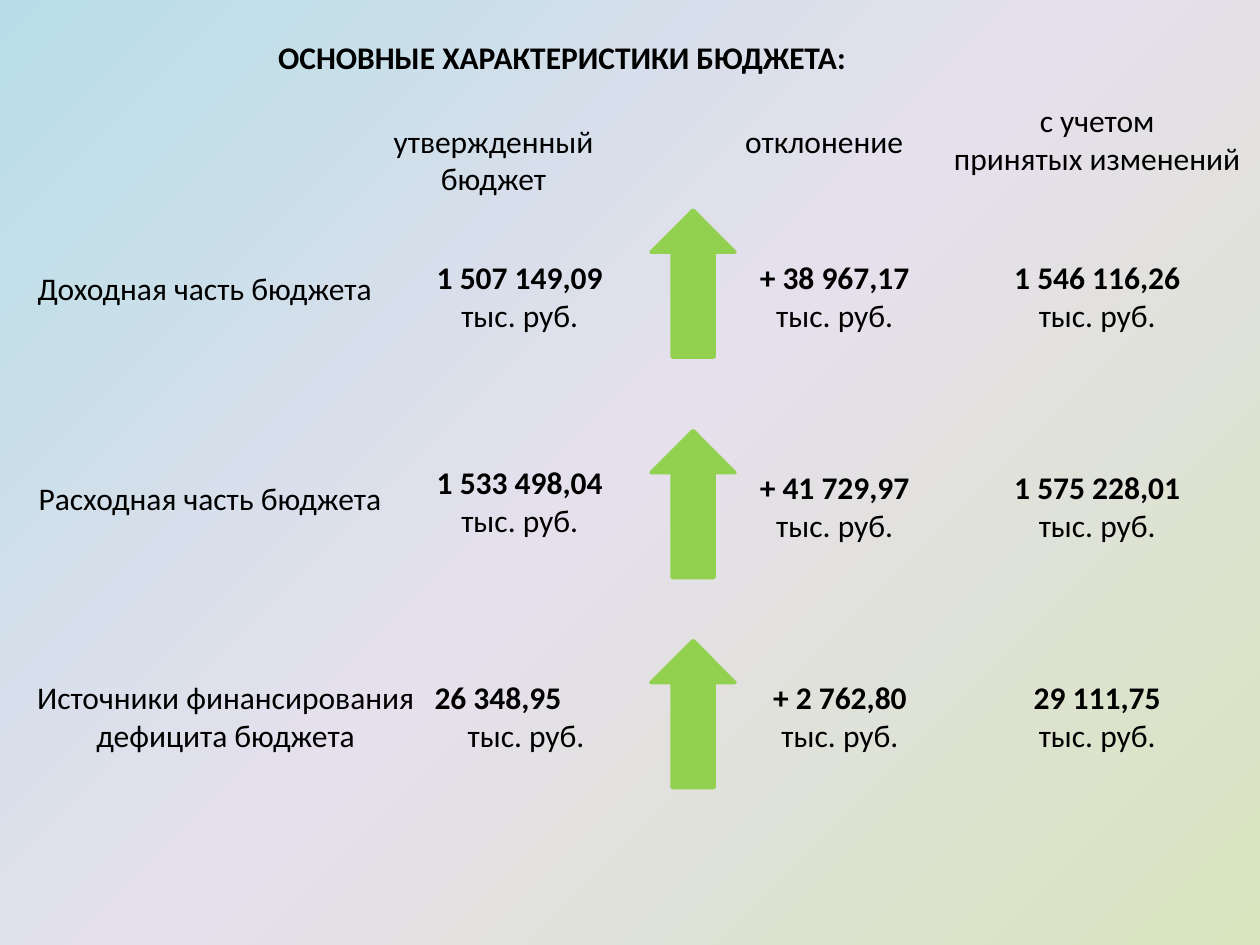
from pptx import Presentation, util as u
from pptx.dml.color import RGBColor
from pptx.enum import shapes, text
from pptx.oxml import parse_xml
from pptx.oxml.ns import nsdecls, qn

PX = u.Inches(1) // 120
BLACK = RGBColor(0x00, 0x00, 0x00)
GREEN = RGBColor(0x92, 0xD0, 0x50)
SAGE = RGBColor(0xD7, 0xE4, 0xBD)
LILAC = RGBColor(0xE6, 0xE0, 0xEC)
AQUA = RGBColor(0xB7, 0xDE, 0xE8)


class BudgetSlide:
    """Style and drawing methods for the budget slide."""

    font = "Calibri"
    size = u.Pt(18)

    def __init__(self, prs):
        self.s = prs.slides.add_slide(prs.slide_layouts[5])

    def place(self, sp, x, y, w, h):
        sp.left, sp.top, sp.width, sp.height = (v * PX for v in (x, y, w, h))

    def background(self, *colors):
        self.s.background.fill.solid()
        solid = self.s.element.find(f".//{qn('p:bgPr')}/{qn('a:solidFill')}")
        step = 100000 // (len(colors) - 1)
        stops = "".join(
            f'<a:gs pos="{i * step}"><a:srgbClr val="{c}"/></a:gs>'
            for i, c in enumerate(colors)
        )
        grad = parse_xml(
            f'<a:gradFill {nsdecls("a")} rotWithShape="1"><a:gsLst>{stops}</a:gsLst>'
            '<a:path path="circle"><a:fillToRect l="100000" t="100000"/></a:path>'
            "</a:gradFill>"
        )
        solid.getparent().replace(solid, grad)

    def set_text(self, sp, lines, bold=False, wrap=True):
        tf = sp.text_frame
        tf.text = "\n".join(lines)
        tf.word_wrap = wrap
        tf.auto_size = text.MSO_AUTO_SIZE.SHAPE_TO_FIT_TEXT
        tf.vertical_anchor = text.MSO_ANCHOR.TOP
        for p in tf.paragraphs:
            p.alignment = text.PP_ALIGN.CENTER
            p.font.name, p.font.size, p.font.bold = self.font, self.size, bold
            p.font.color.rgb = BLACK
        return tf

    def title(self, line, x, y, w, h):
        sp = self.s.shapes.title
        self.place(sp, x, y, w, h)
        self.set_text(sp, [line], bold=True, wrap=False)

    def label(self, lines, x, y, w, h):
        sp = self.s.shapes.add_textbox(0, 0, 0, 0)
        self.place(sp, x, y, w, h)
        return self.set_text(sp, lines)

    def amount(self, value, x, y, w, align=text.PP_ALIGN.CENTER):
        p = self.label([value, "тыс. руб."], x, y, w, 85).paragraphs[0]
        p.font.bold = True
        p.alignment = align

    def arrow(self, x, y, w, h):
        sp = self.s.shapes.add_shape(shapes.MSO_SHAPE.DOWN_ARROW, 0, 0, 0, 0)
        self.place(sp, x, y, w, h)
        sp.rotation = 180
        sp.shadow.inherit = False
        sp.fill.solid()
        sp.fill.fore_color.rgb = sp.line.color.rgb = GREEN
        sp.line.width = u.Pt(2)


def main():
    prs = Presentation()
    prs.slide_width, prs.slide_height = 1200 * PX, 900 * PX
    slide = BudgetSlide(prs)
    slide.background(SAGE, LILAC, AQUA)
    slide.title("ОСНОВНЫЕ ХАРАКТЕРИСТИКИ БЮДЖЕТА:", 250, 30, 571, 48)

    slide.label(["утвержденный бюджет"], 330, 110, 280, 85)
    slide.label(["отклонение"], 690, 110, 190, 48)
    slide.label(["с учетом", "принятых изменений"], 890, 90, 310, 85)

    slide.label(["Доходная часть бюджета"], 20, 250, 350, 48)
    slide.label(["Расходная часть бюджета"], 20, 450, 360, 48)
    slide.label(["Источники финансирования дефицита бюджета"], 20, 640, 390, 85)

    for y in (200, 410, 610):
        slide.arrow(620, y, 80, 140)

    slide.amount("1 507 149,09", 400, 240, 190)
    slide.amount("1 533 498,04", 400, 435, 190)
    slide.amount("26 348,95", 402, 640, 198, text.PP_ALIGN.LEFT)

    changes = (
        (240, 170, "+ 38 967,17", "1 546 116,26"),
        (440, 170, "+ 41 729,97", "1 575 228,01"),
        (640, 180, "+ 2 762,80", "29 111,75"),
    )
    for y, w, deviation, revised in changes:
        slide.amount(deviation, 710, y, w)
        slide.amount(revised, 950, y, 190)

    prs.save("out.pptx")


if __name__ == "__main__":
    main()
